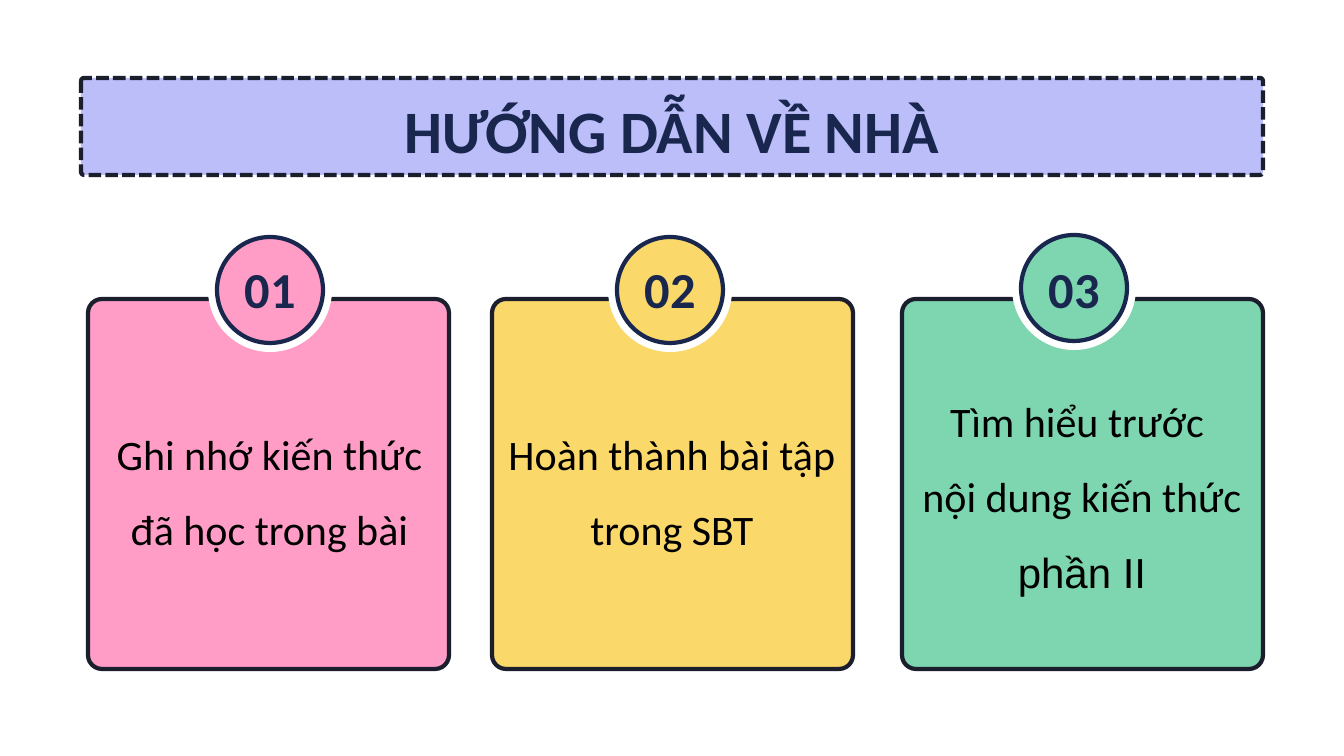
from pptx import Presentation
from pptx.dml.color import RGBColor
from pptx.enum.dml import MSO_LINE
from pptx.enum.shapes import MSO_SHAPE as Preset
from pptx.enum.text import MSO_ANCHOR as Anchor, MSO_AUTO_SIZE as AutoSize, PP_ALIGN as Align
from pptx.util import Emu, Pt

EMU_PER_PX = 914400 / 100.8

WHITE = RGBColor(0xFF, 0xFF, 0xFF)
BLACK = RGBColor(0x00, 0x00, 0x00)
INK = RGBColor(0x1A, 0x1E, 0x2D)
NAVY = RGBColor(0x19, 0x27, 0x4F)
LILAC = RGBColor(0xBC, 0xBE, 0xFA)
PINK = RGBColor(0xFF, 0x9D, 0xC6)
YELLOW = RGBColor(0xFB, 0xD8, 0x6A)
GREEN = RGBColor(0x7D, 0xD6, 0xB0)

HEADING = "HƯỚNG DẪN VỀ NHÀ"
CARD_TOP, CARD_WIDTH, CARD_HEIGHT = 299, 361, 370
HALO, BADGE = 124, 106

# Card left, badge centre x and y, colour, task box (left, top, width, height),
# task paragraphs as (text, font) runs
TASKS = [
    (88, 270, 290, PINK, (89, 400, 361, 159),
     [[("Ghi nhớ kiến thức đã học trong bài", "Calibri")]]),
    (492, 670, 290, YELLOW, (495, 400, 354, 159),
     [[("Hoàn thành bài tập trong SBT", "Calibri")]]),
    (902, 1074, 288, GREEN, (905, 367, 354, 236),
     [[("Tìm hiểu trước ", "Calibri")],
      [("nội dung kiến thức ", "Calibri"), ("phần II", "Arial")]]),
]


def px(length):
    return Emu(round(length * EMU_PER_PX))


def add_panel(slide, preset, box, fill, outline=None, radius=None):
    """Add a filled shape; radius is the corner radius in px."""
    panel = slide.shapes.add_shape(preset, *map(px, box))
    panel.shadow.inherit = False
    panel.fill.solid()
    panel.fill.fore_color.rgb = fill
    if outline is None:
        panel.line.fill.background()
    else:
        panel.line.color.rgb = outline
        panel.line.width = Pt(3)
    if radius is not None:
        panel.adjustments[0] = radius / min(box[2:])
    return panel


def add_disc(slide, centre_x, centre_y, diameter, fill, outline=None):
    box = (centre_x - diameter / 2, centre_y - diameter / 2, diameter, diameter)
    add_panel(slide, Preset.OVAL, box, fill, outline)


def write(frame, paragraphs, size, color, bold=False, spacing=None, insets=(0, 0)):
    """Fill a text frame with centred paragraphs of (text, font) runs."""
    frame.word_wrap = True
    frame.auto_size = AutoSize.NONE
    frame.margin_left = frame.margin_right = px(insets[0])
    frame.margin_top = frame.margin_bottom = px(insets[1])
    for index, runs in enumerate(paragraphs):
        paragraph = frame.add_paragraph() if index else frame.paragraphs[0]
        paragraph.alignment = Align.CENTER
        if spacing:
            paragraph.line_spacing = spacing
        for text, font in runs:
            run = paragraph.add_run()
            run.text = text
            run.font.name = font
            run.font.size = Pt(size)
            run.font.bold = bold
            run.font.color.rgb = color


def add_heading(slide):
    banner = add_panel(slide, Preset.ROUNDED_RECTANGLE, (81, 78, 1182, 97),
                       LILAC, INK, radius=3)
    banner.line.dash_style = MSO_LINE.SQUARE_DOT
    heading = slide.shapes.title
    heading._element.addprevious(banner._element)
    heading.left, heading.top, heading.width, heading.height = map(px, (164, 92, 1016, 75))
    write(heading.text_frame, [[(HEADING, "Calibri")]], 43, NAVY, bold=True)
    heading.text_frame.vertical_anchor = Anchor.MIDDLE


def add_text(slide, box, paragraphs, size, color, **style):
    frame = slide.shapes.add_textbox(*map(px, box)).text_frame
    write(frame, paragraphs, size, color, **style)


def add_badge(slide, centre_x, centre_y, number, color):
    add_disc(slide, centre_x, centre_y, HALO, WHITE)
    add_disc(slide, centre_x, centre_y, BADGE, color, NAVY)
    add_text(slide, (centre_x - 50, 258, 101, 62), [[(f"{number:02d}", "Calibri")]],
             36, NAVY, bold=True)


def main():
    deck = Presentation()
    deck.slide_width, deck.slide_height = px(1344), px(756)
    slide = deck.slides.add_slide(deck.slide_layouts[5])
    add_heading(slide)
    for number, (left, badge_x, badge_y, color, task_box, task) in enumerate(TASKS, 1):
        add_panel(slide, Preset.ROUNDED_RECTANGLE,
                  (left, CARD_TOP, CARD_WIDTH, CARD_HEIGHT), color, INK, radius=14)
        add_badge(slide, badge_x, badge_y, number, color)
        add_text(slide, task_box, task, 30, BLACK, spacing=1.5, insets=(7, 3))
    deck.save("out.pptx")


if __name__ == "__main__":
    main()
